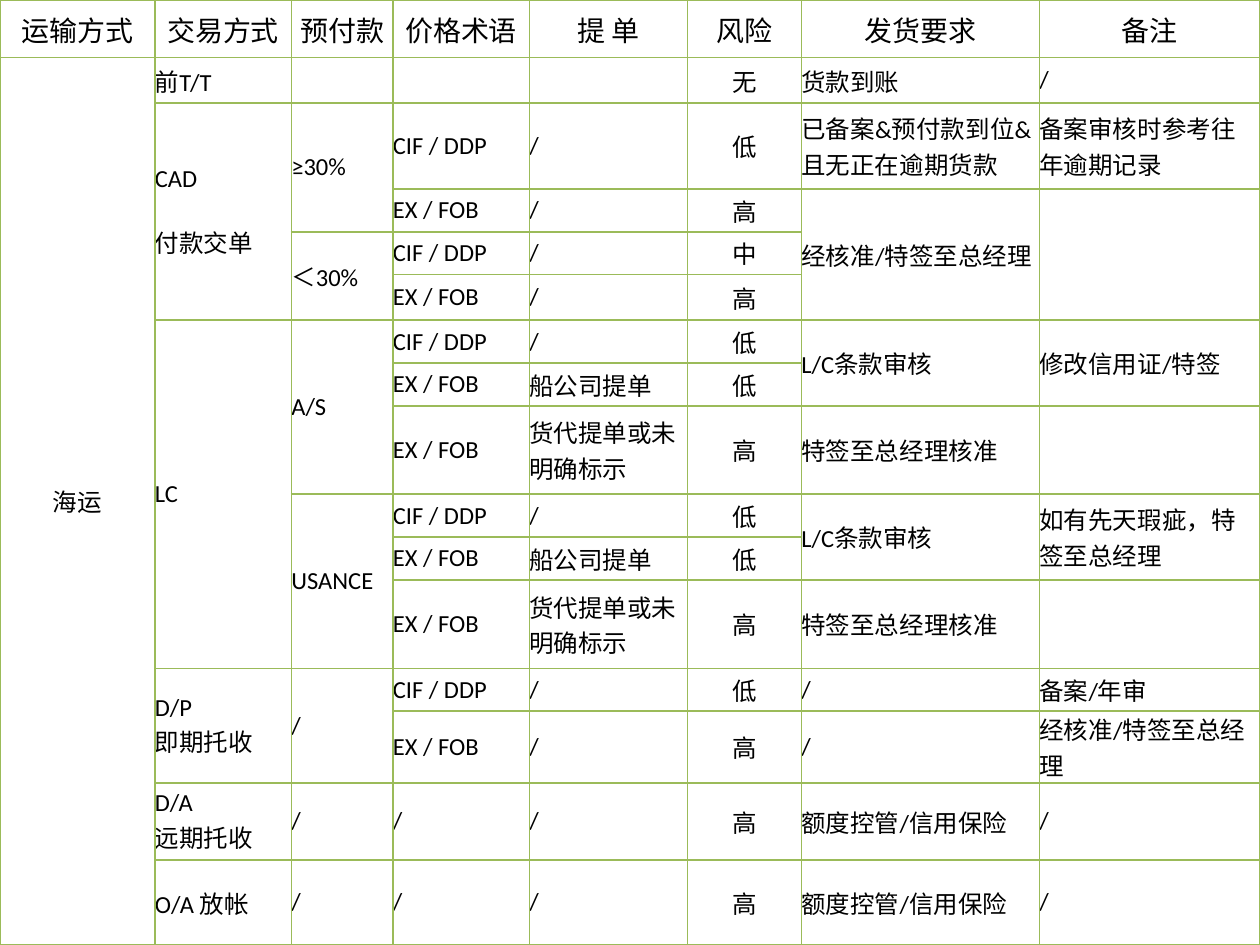
import pptx
import pptx.util
import pptx.dml.color
import pptx.enum.text
import pptx.oxml
import pptx.oxml.ns

Pt = pptx.util.Pt
Align = pptx.enum.text.PP_ALIGN
GREEN = "9BBB59"
BLACK = "000000"


def color(code):
    return pptx.dml.color.RGBColor.from_string(code)


def border(cell):
    props = cell._tc.get_or_add_tcPr()
    space = pptx.oxml.ns.nsdecls("a")
    for side in "LRTB":
        props.append(pptx.oxml.parse_xml(
            f'<a:ln{side} {space} w="{Pt(1)}"><a:solidFill>'
            f'<a:srgbClr val="{GREEN}"/></a:solidFill></a:ln{side}>'))


# Table content: "^" continues the cell above, "|" starts a new paragraph
UP = "^"
CIF, FOB = "CIF / DDP", "EX / FOB"
ship, agent = "船公司提单", "货代提单或未明确标示"
check, sign = "L/C条款审核", "特签至总经理核准"
boss, limit = "经核准/特签至总经理", "额度控管/信用保险"
rows = [
    ["运输方式", "交易方式", "预付款", "价格术语", "提 单", "风险", "发货要求", "备注"],
    ["海运", "前T/T", "", "", "", "无", "货款到账", "/"],
    [UP, "CAD|付款交单", "≥30%", CIF, "/", "低",
     "已备案&预付款到位&且无正在逾期货款", "备案审核时参考往年逾期记录"],
    [UP, UP, UP, FOB, "/", "高", boss, ""],
    [UP, UP, "＜30%", CIF, "/", "中", UP, UP],
    [UP, UP, UP, FOB, "/", "高", UP, UP],
    [UP, "LC", "A/S", CIF, "/", "低", check, "修改信用证/特签"],
    [UP, UP, UP, FOB, ship, "低", UP, UP],
    [UP, UP, UP, FOB, agent, "高", sign, ""],
    [UP, UP, "USANCE", CIF, "/", "低", check, "如有先天瑕疵，特签至总经理"],
    [UP, UP, UP, FOB, ship, "低", UP, UP],
    [UP, UP, UP, FOB, agent, "高", sign, ""],
    [UP, "D/P|即期托收", "/", CIF, "/", "低", "/", "备案/年审"],
    [UP, UP, UP, FOB, "/", "高", "/", boss],
    [UP, "D/A|远期托收", "/", "/", "/", "高", limit, "/"],
    [UP, "O/A 放帐", "/", "/", "/", "高", limit, "/"],
]
widths = [88.5, 78, 58, 78, 90.5, 65, 136, 126]
heights = [33, 26, 49, 24.5, 24.5, 26, 24.5, 24.5, 50.5,
           24.5, 24.5, 50.5, 24.5, 41, 44, 48.5]
centered = (0, 5)

# Slide and empty table
deck = pptx.Presentation()
deck.slide_width, deck.slide_height = Pt(720), Pt(540)
slide = deck.slides.add_slide(deck.slide_layouts[6])
table = slide.shapes.add_table(
    len(rows), len(widths), 0, 0, Pt(720), Pt(540)).table
table.first_row = table.horz_banding = False
for col, width in zip(table.columns, widths):
    col.width = Pt(width)
for row, height in zip(table.rows, heights):
    row.height = Pt(height)

# Cells
for r, texts in enumerate(rows):
    for c, text in enumerate(texts):
        cell = table.cell(r, c)
        border(cell)
        cell.fill.background()
        cell.margin_left = cell.margin_right = 0
        cell.margin_top = cell.margin_bottom = 0
        cell.vertical_anchor = pptx.enum.text.MSO_ANCHOR.MIDDLE
        if text in ("", UP):
            continue
        frame = cell.text_frame
        for n, part in enumerate(text.split("|")):
            para = frame.add_paragraph() if n else frame.paragraphs[0]
            if r == 0 or c in centered:
                para.alignment = Align.CENTER
            run = para.add_run()
            run.text = part
            run.font.name = "Calibri"
            run.font.size = Pt(16 if r == 0 else 14)
            run.font.color.rgb = color(BLACK)
            if part == "CAD":
                para.space_after = Pt(17)

# Vertical merges
for c in range(len(widths)):
    top = 0
    for r in range(1, len(rows) + 1):
        if r < len(rows) and rows[r][c] == UP:
            continue
        if r - top > 1:
            table.cell(top, c).merge(table.cell(r - 1, c))
        top = r

deck.save("out.pptx")
